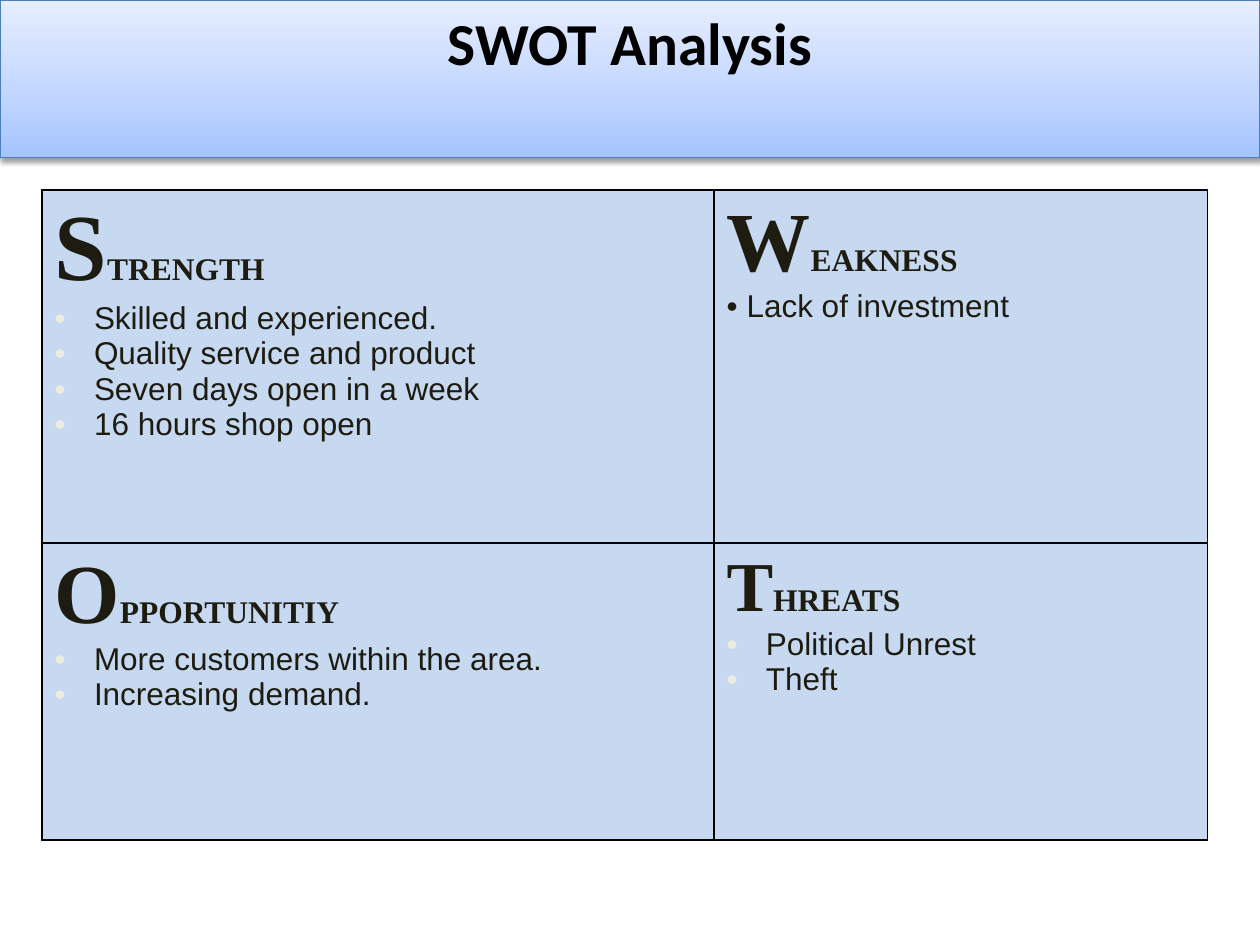
import copy
import pptx
import pptx.util
import pptx.dml.color
import pptx.enum.shapes
import pptx.enum.text
import pptx.oxml
import pptx.oxml.ns

Pt = pptx.util.Pt
Color = pptx.dml.color.RGBColor.from_string
NS = pptx.oxml.ns.nsdecls("a")


class Theme:
    ink = "1E1C11"
    black = "000000"
    cell = "C6D9F1"
    edge = "4B7EBC"
    pale = "EEECE1"
    fade = [(0, "A4C4FF"), (0.35, "BFD4FF"), (1, "E6EEFF")]
    title = 34
    body = 18
    sans = "Arial"
    serif = "Times New Roman"
    head = "Calibri"


def write(para, text, size=Theme.body, face=Theme.sans, color=Theme.ink, bold=False):
    run = para.add_run()
    run.text = text
    run.font.size = Pt(size)
    run.font.name = face
    run.font.bold = bold
    run.font.color.rgb = Color(color)


def bullet(para, color, indent):
    props = para._p.get_or_add_pPr()
    props.set("marL", str(Pt(indent)))
    props.set("indent", str(-Pt(indent)))
    for xml in (
        f'<a:buClr {NS}><a:srgbClr val="{color}"/></a:buClr>',
        f'<a:buFont {NS} typeface="{Theme.sans}"/>',
        f'<a:buChar {NS} char="•"/>',
    ):
        props.append(pptx.oxml.parse_xml(xml))


deck = pptx.Presentation()
deck.slide_width, deck.slide_height = Pt(720), Pt(540)
slide = deck.slides.add_slide(deck.slide_layouts[6])

parts = [
    ("S", "TRENGTH", 54, Theme.pale, 22.5,
     ["Skilled and experienced.", "Quality service and product",
      "Seven days open in a week", "16 hours shop open"]),
    ("W", "EAKNESS", 48, Theme.ink, 11.4, ["Lack of investment"]),
    ("O", "PPORTUNITIY", 48, Theme.pale, 22.5,
     ["More customers within the area.", "Increasing demand."]),
    ("T", "HREATS", 40, Theme.pale, 22.5, ["Political Unrest", "Theft"]),
]
widths = [384, 282]
heights = [201.6, 169.9]
frame = slide.shapes.add_table(
    2, 2, Pt(24), Pt(108.6), Pt(sum(widths)), Pt(sum(heights)))
grid = frame.table
grid.first_row = grid.horz_banding = False
for col, width in zip(grid.columns, widths):
    col.width = Pt(width)
for row, height in zip(grid.rows, heights):
    row.height = Pt(height)

for cell, (first, rest, size, dot, indent, items) in zip(grid.iter_cells(), parts):
    cell.fill.solid()
    cell.fill.fore_color.rgb = Color(Theme.cell)
    props = cell._tc.get_or_add_tcPr()
    for spot, side in enumerate("LRTB"):
        props.insert(spot, pptx.oxml.parse_xml(
            f'<a:ln{side} {NS} w="{Pt(1)}"><a:solidFill>'
            f'<a:srgbClr val="{Theme.black}"/></a:solidFill></a:ln{side}>'))
    para = cell.text_frame.paragraphs[0]
    write(para, first, size=size, face=Theme.serif, bold=True)
    write(para, rest, face=Theme.serif, bold=True)
    for item in items:
        para = cell.text_frame.add_paragraph()
        bullet(para, dot, indent)
        write(para, item)

banner = slide.shapes.add_shape(
    pptx.enum.shapes.MSO_SHAPE.RECTANGLE, 0, 0, Pt(720), Pt(90))
banner.line.color.rgb = Color(Theme.edge)
banner.line.width = Pt(0.75)
banner.fill.gradient()
banner.fill.gradient_angle = 90
stops = banner._element.spPr.xpath("a:gradFill/a:gsLst")[0]
stops.insert(1, copy.deepcopy(stops[0]))
for stop, (place, color) in zip(banner.fill.gradient_stops, Theme.fade):
    stop.position = place
    stop.color.rgb = Color(color)
banner.shadow.inherit = False
banner._element.spPr.xpath("a:effectLst")[0].append(pptx.oxml.parse_xml(
    f'<a:outerShdw {NS} blurRad="{Pt(3.1)}" dist="{Pt(1.6)}" dir="5400000" '
    f'rotWithShape="0"><a:srgbClr val="{Theme.black}">'
    '<a:alpha val="38000"/></a:srgbClr></a:outerShdw>'))

body = banner.text_frame
body.word_wrap = True
body.vertical_anchor = pptx.enum.text.MSO_ANCHOR.TOP
para = body.paragraphs[0]
para.alignment = pptx.enum.text.PP_ALIGN.CENTER
write(para, "SWOT Analysis", size=Theme.title, face=Theme.head,
      color=Theme.black, bold=True)

deck.save("out.pptx")
